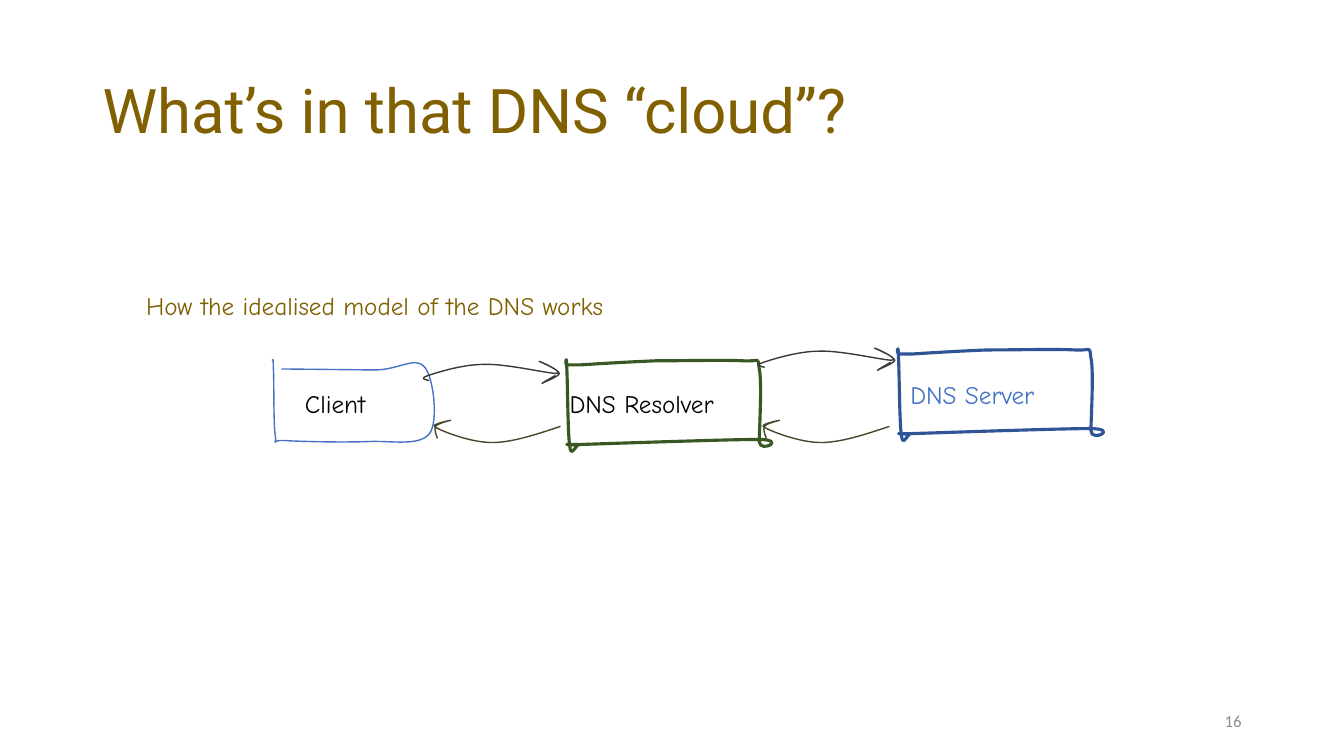
from dataclasses import dataclass

from pptx import Presentation
from pptx.dml.color import RGBColor
from pptx.enum.text import MSO_ANCHOR as Anchor, MSO_AUTO_SIZE as AutoSize, PP_ALIGN as Align
from pptx.oxml.ns import qn
from pptx.util import Emu, Inches, Pt

WIDTH, HEIGHT = Inches(13.33), Inches(7.5)
STROKE_UNIT = Inches(0.01)


@dataclass(frozen=True)
class Theme:
    title_font: str = "Roboto"
    sketch_font: str = "Comic Neue"
    number_font: str = "Calibri"
    title_size: float = 44
    label_size: float = 18
    number_size: float = 12
    thin: float = 1
    thick: float = 2.25
    gold: str = "806000"
    black: str = "000000"
    grey: str = "8C8C8C"
    blue: str = "4472C4"
    dark_blue: str = "2F5597"
    green: str = "385723"
    request: str = "3B3838"
    reply: str = "4A452A"


THEME = Theme()

# Hand-drawn strokes in hundredths of an inch: a start point, then segments.
# Two values end a straight line, six give a cubic curve.
CLIENT_BOX = [(9, 10), [
    (102, 11), (125, 11, 142, -3, 151, 8),
    (160, 18, 165, 62, 156, 74), (146, 87, 119, 81, 95, 82),
    (71, 83, 28, 82, 12, 81), (-3, 80, 5, 88, 3, 76),
    (1, 63, 2, 20, 1, 8), (1, -4, 0, 2, 0, 2)]]
SERVICE_BOX = [(15, 6), [
    (30, 5, 63, 3, 89, 2), (116, 2, 159, 1, 176, 2),
    (194, 3, 190, -3, 192, 10), (195, 23, 192, 71, 192, 82),
    (192, 94, 221, 80, 191, 80), (162, 80, 45, 84, 15, 85),
    (-15, 85, 13, 85, 12, 86), (10, 86, 5, 99, 4, 86),
    (2, 73, 2, 20, 1, 7), (1, -7, -1, 6, 1, 6), (4, 6, 0, 6, 15, 6)]]
REQUEST_ARROW = [(6, 19), [
    (1, 18, -4, 17, 5, 14), (14, 11, 39, 3, 60, 3),
    (81, 2, 123, 12, 132, 12), (141, 11, 115, 0, 115, 0),
    (116, 0, 134, 8, 135, 12), (135, 15, 118, 21, 118, 22),
    (117, 22, 124, 18, 131, 14)]]
REPLY_ARROW = [(125, 6), [
    (101, 14, 77, 22, 57, 22), (36, 22, 8, 11, 1, 7),
    (-6, 4, 16, 0, 16, 0), (16, 0, 3, 3, 1, 6), (-1, 9, 3, 18, 3, 18)]]


def across(percent):
    return Emu(round(WIDTH * percent / 100))


def down(percent):
    return Emu(round(HEIGHT * percent / 100))


def place(left, top, width, height):
    """Turn percentages of the slide into a position and a size."""
    return across(left), down(top), across(width), down(height)


def write(shape, text, font=THEME.sketch_font, size=THEME.label_size,
          color=THEME.black, align=Align.LEFT, anchor=Anchor.TOP,
          wrap=False, grow=True, spacing=1.0):
    frame = shape.text_frame
    frame.word_wrap = wrap
    frame.auto_size = AutoSize.SHAPE_TO_FIT_TEXT if grow else AutoSize.NONE
    frame.vertical_anchor = anchor
    paragraph = frame.paragraphs[0]
    paragraph.alignment = align
    paragraph.line_spacing = spacing
    run = paragraph.add_run()
    run.text = text
    run.font.name = font
    run.font.size = Pt(size)
    run.font.color.rgb = RGBColor.from_string(color)


def add_title(slide, text, box):
    title = slide.shapes.title
    title.left, title.top, title.width, title.height = place(*box)
    write(title, text, font=THEME.title_font, size=THEME.title_size,
          color=THEME.gold, anchor=Anchor.MIDDLE, wrap=True, grow=False, spacing=0.9)


def add_label(slide, text, box, **text_format):
    write(slide.shapes.add_textbox(*place(*box)), text, **text_format)


def points_on(start, segment):
    """Return the end of a line, or three points along a cubic curve."""
    if len(segment) == 2:
        return [segment]
    values = (*start, *segment)
    points = []
    for t in (1 / 3, 2 / 3, 1):
        weights = ((1 - t) ** 3, 3 * t * (1 - t) ** 2, 3 * t * t * (1 - t), t ** 3)
        points.append(tuple(sum(weight * value for weight, value in zip(weights, axis))
                            for axis in (values[::2], values[1::2])))
    return points


def bend(shape, start, segments):
    """Turn each run of three lines into the cubic curve it stands for."""
    origin = shape.element.find(".//" + qn("a:moveTo"))[0]
    shift_x = int(origin.get("x")) - start[0] * STROKE_UNIT
    shift_y = int(origin.get("y")) - start[1] * STROKE_UNIT
    lines = iter(list(shape.element.iter(qn("a:lnTo"))))
    for segment in segments:
        first = next(lines)
        if len(segment) == 2:
            continue
        curve = first.makeelement(qn("a:cubicBezTo"))
        first.addprevious(curve)
        for line, x, y in zip((first, next(lines), next(lines)), segment[::2], segment[1::2]):
            point = line[0]
            point.set("x", str(x * STROKE_UNIT + shift_x))
            point.set("y", str(y * STROKE_UNIT + shift_y))
            curve.append(point)
            line.getparent().remove(line)


def add_sketch(slide, stroke, left, top, color, weight=THEME.thin):
    start, segments = stroke
    points, end = [], start
    for segment in segments:
        points += points_on(end, segment)
        end = segment[-2:]
    builder = slide.shapes.build_freeform(start[0] * STROKE_UNIT, start[1] * STROKE_UNIT)
    builder.add_line_segments([(x * STROKE_UNIT, y * STROKE_UNIT) for x, y in points],
                              close=start == end)
    shape = builder.convert_to_shape(across(left), down(top))
    bend(shape, start, segments)
    shape.shadow.inherit = False
    shape.fill.background()
    shape.line.color.rgb = RGBColor.from_string(color)
    shape.line.width = Pt(weight)


def main():
    presentation = Presentation()
    presentation.slide_width, presentation.slide_height = WIDTH, HEIGHT
    slide = presentation.slides.add_slide(presentation.slide_layouts[5])

    # Title, caption and page number
    add_title(slide, "What’s in that DNS “cloud”?", (6.88, 5.33, 86.27, 19.33))
    add_label(slide, "How the idealised model of the DNS works",
              (10.13, 37.8, 44.41, 5.33), color=THEME.gold)
    add_label(slide, "16", (70.63, 92.67, 22.5, 5.33), font=THEME.number_font,
              size=THEME.number_size, color=THEME.grey, align=Align.RIGHT,
              anchor=Anchor.MIDDLE, wrap=True, grow=False)

    # Sketched boxes
    add_sketch(slide, CLIENT_BOX, 20.26, 47.47, THEME.blue)
    add_sketch(slide, SERVICE_BOX, 42.09, 47.47, THEME.green, THEME.thick)
    add_sketch(slide, SERVICE_BOX, 66.77, 46.03, THEME.dark_blue, THEME.thick)

    # Box labels
    add_label(slide, "Client", (21.95, 50.73, 7.58, 5.33))
    add_label(slide, "DNS Resolver", (41.64, 50.73, 15.53, 5.33))
    add_label(slide, "DNS Server", (66.99, 49.47, 13.8, 5.33), color=THEME.blue)

    # Requests run to the right, replies to the left
    for left, top in ((31.49, 47.8), (56.45, 46.05)):
        add_sketch(slide, REQUEST_ARROW, left, top, THEME.request)
    for left in (32.33, 56.8):
        add_sketch(slide, REPLY_ARROW, left, 55.6, THEME.reply)

    presentation.save("out.pptx")


if __name__ == "__main__":
    main()
